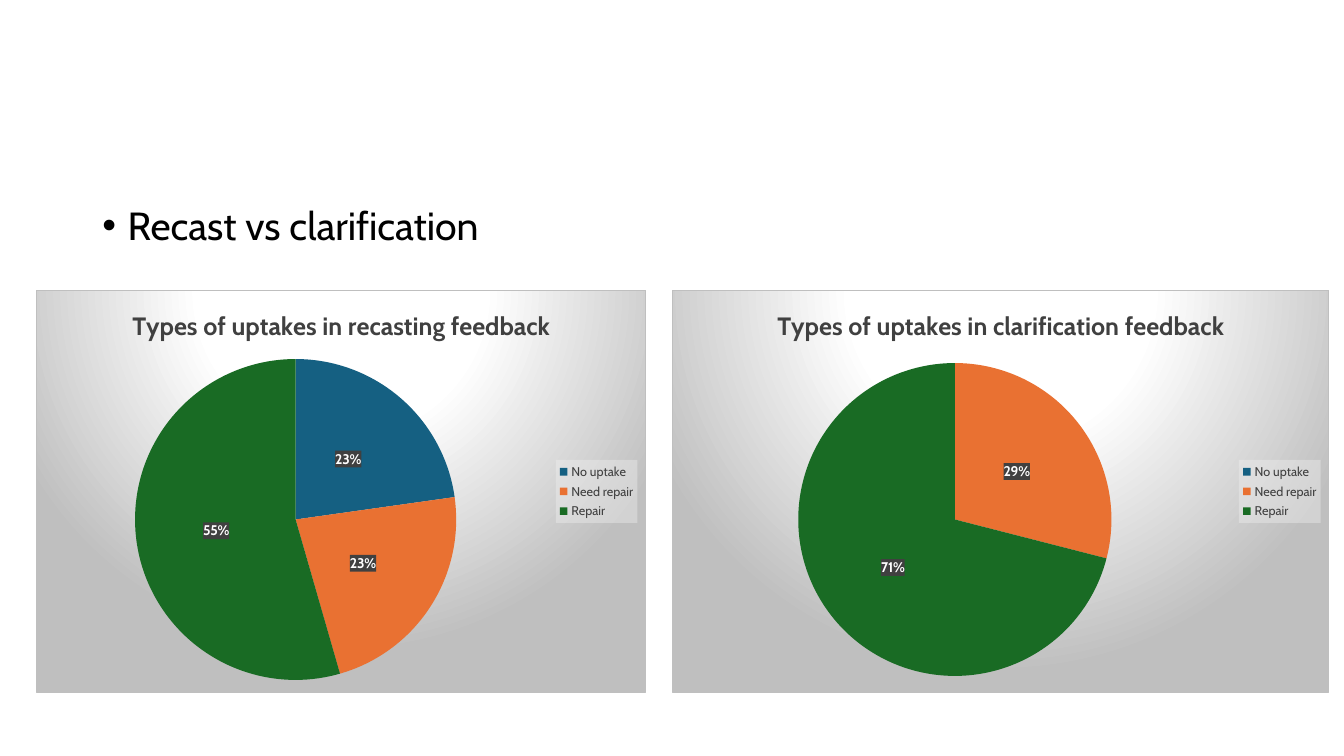
from lxml import etree
from pptx import Presentation
from pptx.chart.data import CategoryChartData
from pptx.dml.color import RGBColor
from pptx.enum.chart import XL_CHART_TYPE, XL_LABEL_POSITION, XL_LEGEND_POSITION
from pptx.enum.text import MSO_ANCHOR, MSO_AUTO_SIZE
from pptx.oxml import parse_xml
from pptx.oxml.ns import qn
from pptx.util import Pt

PIE = XL_CHART_TYPE.PIE
LABEL_CENTER = XL_LABEL_POSITION.CENTER
LEGEND_RIGHT = XL_LEGEND_POSITION.RIGHT
TOP = MSO_ANCHOR.TOP
NO_AUTOFIT = MSO_AUTO_SIZE.NONE

FONT = "Cabin"
DARK = "404040"
CATEGORIES = ["No uptake", "Need repair", "Repair"]
SLICE_COLORS = ["156082", "E97132", "196B24"]
CHART_TOP, CHART_HEIGHT = 207.4, 287.3
NAMESPACES = (
    'xmlns:c="http://schemas.openxmlformats.org/drawingml/2006/chart" '
    'xmlns:a="http://schemas.openxmlformats.org/drawingml/2006/main"'
)


def rgb(color):
    return RGBColor.from_string(color)


def style_font(font, size, color, bold=False):
    font.name = FONT
    font.size = Pt(size)
    font.bold = bold
    font.color.rgb = rgb(color)


def shape_properties(content):
    return parse_xml(f"<c:spPr {NAMESPACES}>{content}</c:spPr>")


def translucent_fill(color, percent):
    return shape_properties(
        f'<a:solidFill><a:srgbClr val="{color}">'
        f'<a:alpha val="{percent * 1000}"/></a:srgbClr></a:solidFill>'
    )


def chart_background():
    """Radial white-to-grey fill with a thin grey border."""
    stops = "".join(
        f'<a:gs pos="{percent * 1000}"><a:srgbClr val="{color}"/></a:gs>'
        for percent, color in [(0, "FFFFFF"), (39, "FFFFFF"), (100, "BFBFBF")]
    )
    return shape_properties(
        f'<a:gradFill><a:gsLst>{stops}</a:gsLst><a:path path="circle">'
        '<a:fillToRect l="50000" t="-80000" r="50000" b="180000"/></a:path></a:gradFill>'
        f'<a:ln w="{Pt(0.75)}"><a:solidFill><a:srgbClr val="BFBFBF"/></a:solidFill></a:ln>'
    )


def place_plot(chart, area):
    """Set the inner plot area as fractions (x, y, w, h) of the chart."""
    plot_area = chart._chartSpace.chart.plotArea
    for old_layout in plot_area.findall(qn("c:layout")):
        plot_area.remove(old_layout)
    modes = '<c:xMode val="edge"/><c:yMode val="edge"/>'
    sizes = "".join(f'<c:{key} val="{value}"/>' for key, value in zip("xywh", area))
    plot_area.insert(0, parse_xml(
        f'<c:layout {NAMESPACES}><c:manualLayout><c:layoutTarget val="inner"/>'
        f"{modes}{sizes}</c:manualLayout></c:layout>"
    ))


def add_labels(series, values):
    labels = series.data_labels
    labels.show_value = True
    labels.number_format = '0"%"'
    labels.number_format_is_linked = False
    labels.position = LABEL_CENTER
    style_font(labels.font, 10, "FFFFFF", bold=True)
    element = labels._element
    element.find(qn("c:txPr")).addprevious(translucent_fill(DARK, 90))
    empty_slices = [index for index, value in enumerate(values) if value == 0]
    for position, index in enumerate(empty_slices):
        hidden = etree.Element(qn("c:dLbl"))
        etree.SubElement(hidden, qn("c:idx")).set("val", str(index))
        etree.SubElement(hidden, qn("c:delete")).set("val", "1")
        element.insert(position, hidden)


def add_legend(chart):
    chart.has_legend = True
    legend = chart.legend
    legend.position = LEGEND_RIGHT
    legend.include_in_layout = False
    style_font(legend.font, 9, DARK)
    legend._element.find(qn("c:txPr")).addprevious(translucent_fill("F2F2F2", 39))


def add_pie(slide, title, values, left, width, plot_area):
    data = CategoryChartData()
    data.categories = CATEGORIES
    data.add_series("Series 1", values)
    chart = slide.shapes.add_chart(
        PIE, Pt(left), Pt(CHART_TOP), Pt(width), Pt(CHART_HEIGHT), data
    ).chart
    style_font(chart.font, 10, "000000")
    chart._chartSpace.chart.addnext(chart_background())

    chart.has_title = True
    para = chart.chart_title.text_frame.paragraphs[0]
    para.text = title
    style_font(para.runs[0].font, 18, DARK, bold=True)
    chart.chart_title.include_in_layout = False

    plot = chart.plots[0]
    plot.vary_by_categories = True
    series = plot.series[0]
    for index, color in enumerate(SLICE_COLORS):
        fill = series.points[index].format.fill
        fill.solid()
        fill.fore_color.rgb = rgb(color)
    add_labels(series, values)
    add_legend(chart)
    place_plot(chart, plot_area)


def fill_body(body, text):
    body.left, body.top, body.width, body.height = Pt(66), Pt(144), Pt(828), Pt(486.7)
    frame = body.text_frame
    frame.text = text
    frame.word_wrap = True
    frame.auto_size = NO_AUTOFIT
    frame.vertical_anchor = TOP
    para = frame.paragraphs[0]
    para.line_spacing = 0.9
    para.space_before = Pt(0)
    properties = para._p.get_or_add_pPr()
    properties.set("marL", str(Pt(18)))
    properties.set("indent", str(Pt(-18)))
    etree.SubElement(properties, qn("a:buFont")).set("typeface", "Arial")
    etree.SubElement(properties, qn("a:buChar")).set("char", "•")
    style_font(para.runs[0].font, 28, "000000")


def main():
    deck = Presentation()
    deck.slide_width, deck.slide_height = Pt(960), Pt(540)
    slide = deck.slides.add_slide(deck.slide_layouts[1])
    title = slide.shapes.title._element
    title.getparent().remove(title)
    fill_body(slide.placeholders[1], "Recast vs clarification")
    add_pie(slide, "Types of uptakes in recasting feedback", [23, 23, 55],
            26, 435.6, (0.16, 0.17, 0.53, 0.8))
    add_pie(slide, "Types of uptakes in clarification feedback", [0, 29, 71],
            480.2, 469.4, (0.19, 0.18, 0.48, 0.78))
    deck.save("out.pptx")


if __name__ == "__main__":
    main()
